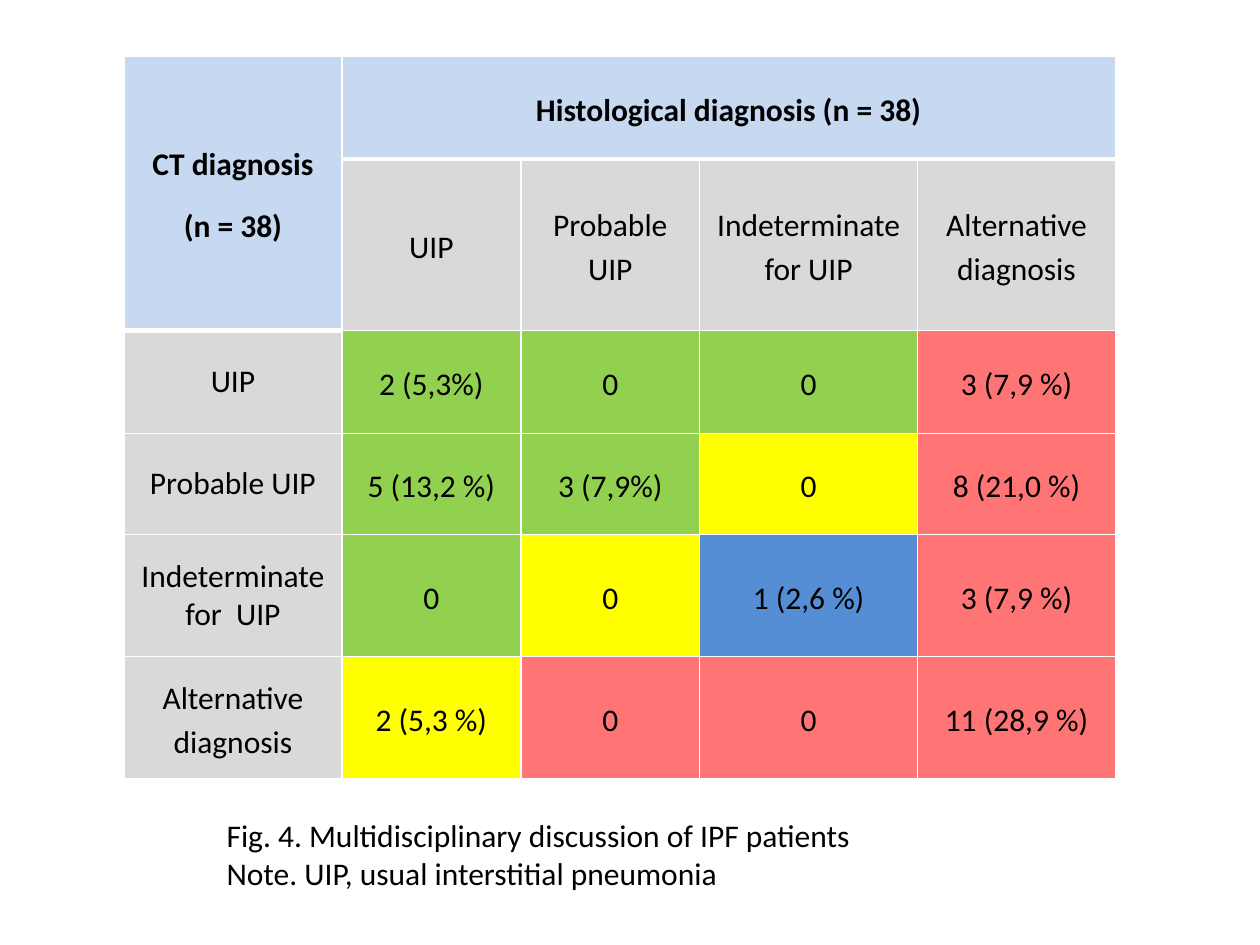
from dataclasses import dataclass

from lxml.etree import SubElement
from pptx import Presentation
from pptx.dml.color import RGBColor
from pptx.enum.text import MSO_ANCHOR, MSO_AUTO_SIZE, PP_ALIGN
from pptx.oxml.ns import qn
from pptx.util import Inches, Pt


@dataclass(frozen=True)
class Theme:
    font: str = "Calibri"
    size: int = 18
    ink: str = "000000"
    line: str = "FFFFFF"
    head: str = "C6D9F1"
    label: str = "D9D9D9"
    green: str = "92D050"
    yellow: str = "FFFF00"
    blue: str = "558ED5"
    red: str = "FF7575"
    thin: int = 1
    thick: int = 3


def write(frame, text, theme, bold=False, align=PP_ALIGN.LEFT, lead=None, after=0):
    for i, line in enumerate(text.split("\n")):
        para = frame.paragraphs[0] if i == 0 else frame.add_paragraph()
        para.alignment = align
        para.line_spacing = lead
        para.space_after = Pt(after)
        run = para.add_run()
        run.text = line
        font = run.font
        font.name, font.size, font.bold = theme.font, Pt(theme.size), bold
        font.color.rgb = RGBColor.from_string(theme.ink)


class Page:
    """Draw styled elements on one slide, with lengths in percent of its size."""

    def __init__(self, deck, theme):
        self.deck, self.theme = deck, theme
        self.slide = deck.slides.add_slide(deck.slide_layouts[6])

    def wide(self, share):
        return round(self.deck.slide_width * share / 100)

    def high(self, share):
        return round(self.deck.slide_height * share / 100)

    def box(self, left, top, width, height):
        return self.wide(left), self.high(top), self.wide(width), self.high(height)

    def text(self, text, *area):
        frame = self.slide.shapes.add_textbox(*self.box(*area)).text_frame
        frame.word_wrap = False
        frame.auto_size = MSO_AUTO_SIZE.SHAPE_TO_FIT_TEXT
        write(frame, text, self.theme)

    def grid(self, left, top, cols, rows):
        area = self.box(left, top, sum(cols), sum(rows))
        table = self.slide.shapes.add_table(len(rows), len(cols), *area).table
        table.horz_banding = False
        for col, share in zip(table.columns, cols):
            col.width = self.wide(share)
        for row, share in zip(table.rows, rows):
            row.height = self.high(share)
        return table

    def edge(self, cell, side, width):
        line = SubElement(cell._tc.get_or_add_tcPr(), qn(f"a:ln{side}"), w=str(Pt(width)))
        fill = SubElement(line, qn("a:solidFill"))
        SubElement(fill, qn("a:srgbClr"), val=self.theme.line)

    def cell(self, cell, text, fill, above=False, below=False, **style):
        cell.vertical_anchor = MSO_ANCHOR.MIDDLE
        cell.margin_left = cell.margin_right = Inches(0.07)
        cell.margin_top = cell.margin_bottom = 0
        thin, thick = self.theme.thin, self.theme.thick
        sides = {"L": thin, "R": thin, "T": thick if above else thin, "B": thick if below else thin}
        for side, width in sides.items():
            self.edge(cell, side, width)
        cell.fill.solid()
        cell.fill.fore_color.rgb = RGBColor.from_string(fill)
        if text:
            write(cell.text_frame, text, self.theme, align=PP_ALIGN.CENTER, **style)


def main():
    deck = Presentation()
    deck.slide_width, deck.slide_height = Inches(10), Inches(7.5)
    theme = Theme()
    page = Page(deck, theme)
    rows = [
        ["CT diagnosis\n(n = 38)", "Histological diagnosis (n = 38)", "", "", ""],
        ["", "UIP", "Probable UIP", "Indeterminate for UIP", "Alternative diagnosis"],
        ["UIP", "2 (5,3%)", "0", "0", "3 (7,9 %)"],
        ["Probable UIP", "5 (13,2 %)", "3 (7,9%)", "0", "8 (21,0 %)"],
        ["Indeterminate for  UIP", "0", "0", "1 (2,6 %)", "3 (7,9 %)"],
        ["Alternative diagnosis", "2 (5,3 %)", "0", "0", "11 (28,9 %)"],
    ]
    hues = {"H": theme.head, "L": theme.label, "G": theme.green,
            "Y": theme.yellow, "B": theme.blue, "R": theme.red}
    fills = ["HHHHH", "HLLLL", "LGGGR", "LGGYR", "LGYBR", "LYRRR"]
    table = page.grid(9.84, 5.9, [17.3, 14.2, 14.2, 17.3, 15.7],
                      [10.93, 18.13, 10.93, 10.67, 12.93, 12.93])
    table.cell(0, 0).merge(table.cell(1, 0))
    table.cell(0, 1).merge(table.cell(0, 4))
    for r, (texts, keys) in enumerate(zip(rows, fills)):
        for c, (text, key) in enumerate(zip(texts, keys)):
            tight = c == 0 and r in (2, 3, 4)
            space = {} if tight else {"lead": 1.15, "after": 10}
            page.cell(table.cell(r, c), text, hues[key], bold=key == "H",
                      above=r == (1 if c else 2), below=r == 0 or (r, c) == (1, 0), **space)
    page.text("Fig. 4. Multidisciplinary discussion of IPF patients\n"
              "Note. UIP, usual interstitial pneumonia", 17, 85.73, 52.1, 9.47)
    deck.save("out.pptx")


if __name__ == "__main__":
    main()
